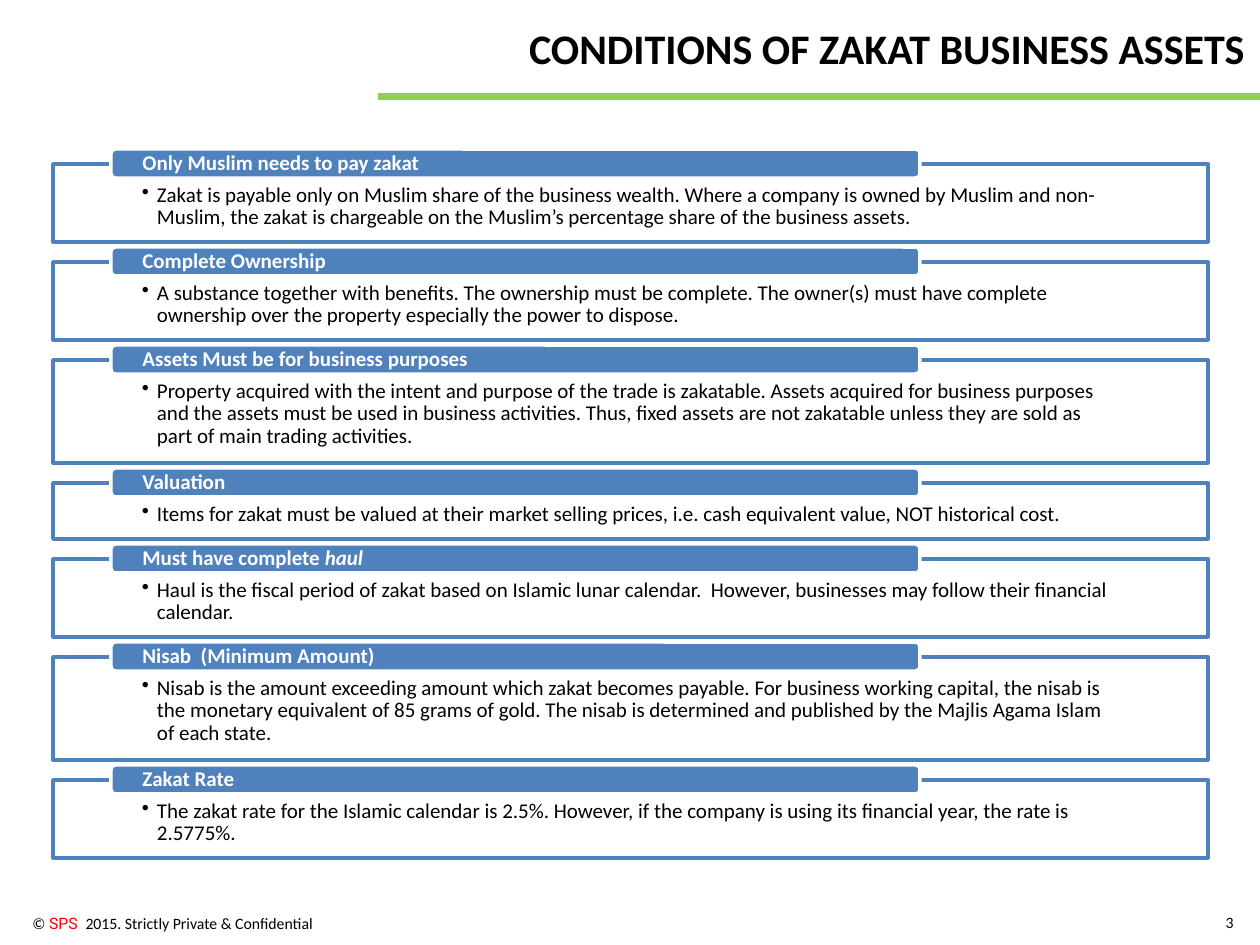
from dataclasses import dataclass

from lxml.etree import SubElement
from pptx import Presentation
from pptx.dml.color import RGBColor
from pptx.enum.shapes import MSO_SHAPE
from pptx.enum.text import MSO_ANCHOR, MSO_AUTO_SIZE, PP_ALIGN
from pptx.oxml.ns import qn
from pptx.util import Emu, Pt

PX_PER_INCH = 126
COLORS = {"blue": "4F81BD", "green": "92D050", "red": "FF0000",
          "black": "000000", "white": "FFFFFF"}

# Condition grid
BOX_LEFT, BOX_WIDTH, FIRST_TOP, BOX_GAP = 53, 1155, 164, 20
BOX_HEIGHTS = {1: 56, 2: 78, 3: 103}  # by number of text lines
BAR_LEFT, BAR_WIDTH, BAR_HEIGHT, BAR_RISE = 111, 809, 29, 15
BULLET_INDENT = 15


@dataclass(frozen=True)
class Run:
    text: str
    color: str = "black"
    size: int = 12
    bold: bool = False
    italic: bool = False
    font: str = "Calibri"


@dataclass(frozen=True)
class Condition:
    heading: str
    body: str
    lines: int
    italic_ending: str = ""


CONDITIONS = [
    Condition("Only Muslim needs to pay zakat",
              "Zakat is payable only on Muslim share of the business wealth. Where a company "
              "is owned by Muslim and non-Muslim, the zakat is chargeable on the Muslim’s "
              "percentage share of the business assets.", 2),
    Condition("Complete Ownership",
              "A substance together with benefits. The ownership must be complete. The owner(s) "
              "must have complete ownership over the property especially the power to dispose.", 2),
    Condition("Assets Must be for business purposes",
              "Property acquired with the intent and purpose of the trade is zakatable. Assets "
              "acquired for business purposes and the assets must be used in business activities. "
              "Thus, fixed assets are not zakatable unless they are sold as part of main trading "
              "activities.", 3),
    Condition("Valuation",
              "Items for zakat must be valued at their market selling prices, i.e. cash "
              "equivalent value, NOT historical cost.", 1),
    Condition("Must have complete ",
              "Haul is the fiscal period of zakat based on Islamic lunar calendar.  However, "
              "businesses may follow their financial calendar.", 2, "haul"),
    Condition("Nisab  (Minimum Amount)",
              "Nisab is the amount exceeding amount which zakat becomes payable. For business "
              "working capital, the nisab is the monetary equivalent of 85 grams of gold. The "
              "nisab is determined and published by the Majlis Agama Islam of each state.", 3),
    Condition("Zakat Rate",
              "The zakat rate for the Islamic calendar is 2.5%. However, if the company is using "
              "its financial year, the rate is 2.5775%.", 2),
]


def px(length: int) -> Emu:
    return Emu(round(length * 914400 / PX_PER_INCH))


def rgb(name: str) -> RGBColor:
    return RGBColor.from_string(COLORS[name])


def set_attributes(target, values: dict) -> None:
    for name, value in values.items():
        setattr(target, name, value)


def add_runs(paragraph, runs: list[Run]) -> None:
    for item in runs:
        run = paragraph.add_run()
        run.text = item.text
        set_attributes(run.font, {"name": item.font, "size": Pt(item.size),
                                  "bold": item.bold, "italic": item.italic})
        run.font.color.rgb = rgb(item.color)


def add_block(slide, kind, bounds: tuple, fill: str, line: str | None = None):
    shape = slide.shapes.add_shape(kind, *map(px, bounds))
    shape.shadow.inherit = False
    shape.fill.solid()
    shape.fill.fore_color.rgb = rgb(fill)
    if line:
        shape.line.color.rgb = rgb(line)
        shape.line.width = Pt(2)
    else:
        shape.line.fill.background()
    return shape


def format_text(shape, runs: list[Run], frame_values: dict, paragraph_values: dict):
    frame = shape.text_frame
    set_attributes(frame, frame_values)
    paragraph = frame.paragraphs[0]
    set_attributes(paragraph, paragraph_values)
    add_runs(paragraph, runs)
    return paragraph


def add_bullet(paragraph) -> None:
    properties = paragraph._p.get_or_add_pPr()
    properties.set("marL", str(px(BULLET_INDENT)))
    properties.set("indent", str(-px(BULLET_INDENT)))
    SubElement(properties, qn("a:buChar")).set("char", "•")


def add_condition(slide, condition: Condition, top: int) -> None:
    # Outlined box with the bulleted explanation
    box = add_block(slide, MSO_SHAPE.RECTANGLE,
                    (BOX_LEFT, top, BOX_WIDTH, BOX_HEIGHTS[condition.lines]), "white", "blue")
    fill_color = box.fill._xPr.find(qn("a:solidFill"))[0]
    SubElement(fill_color, qn("a:alpha")).set("val", "90000")
    paragraph = format_text(
        box, [Run(condition.body)],
        {"word_wrap": True, "vertical_anchor": MSO_ANCHOR.TOP, "margin_left": px(89),
         "margin_right": px(89), "margin_top": px(20), "margin_bottom": px(11)},
        {"alignment": PP_ALIGN.LEFT, "level": 1, "line_spacing": 0.9})
    add_bullet(paragraph)

    # Heading bar across the top edge of the box
    bar = add_block(slide, MSO_SHAPE.ROUNDED_RECTANGLE,
                    (BAR_LEFT, top - BAR_RISE, BAR_WIDTH, BAR_HEIGHT), "blue", "white")
    runs = [Run(condition.heading, "white", bold=True)]
    if condition.italic_ending:
        runs.append(Run(condition.italic_ending, "white", bold=True, italic=True))
    format_text(
        bar, runs,
        {"word_wrap": True, "vertical_anchor": MSO_ANCHOR.MIDDLE, "margin_left": px(30),
         "margin_right": px(30), "margin_top": 0, "margin_bottom": 0},
        {"alignment": PP_ALIGN.LEFT, "line_spacing": 0.9})


def add_label(slide, bounds: tuple, runs: list[Run], anchor) -> None:
    label = slide.shapes.add_textbox(*map(px, bounds))
    format_text(label, runs, {"word_wrap": True, "vertical_anchor": anchor},
                {"alignment": PP_ALIGN.RIGHT})


def main() -> None:
    presentation = Presentation()
    set_attributes(presentation, {"slide_width": px(1260), "slide_height": px(945)})
    slide = presentation.slides.add_slide(presentation.slide_layouts[5])

    # Title and its rule
    add_block(slide, MSO_SHAPE.RECTANGLE, (378, 93, 882, 7), "green")
    title = slide.shapes.title
    set_attributes(title, {"left": px(513), "top": px(16), "width": px(748), "height": px(63)})
    format_text(title, [Run("CONDITIONS OF ZAKAT BUSINESS ASSETS", size=24, bold=True)],
                {"word_wrap": False, "auto_size": MSO_AUTO_SIZE.NONE,
                 "vertical_anchor": MSO_ANCHOR.TOP},
                {"alignment": PP_ALIGN.CENTER})

    # Conditions, stacked with equal gaps
    top = FIRST_TOP
    for condition in CONDITIONS:
        add_condition(slide, condition, top)
        top += BOX_HEIGHTS[condition.lines] + BOX_GAP

    # Footer
    add_label(slide, (-42, 908, 367, 32),
              [Run("© ", size=9), Run("SPS  ", "red", 9, font="Roboto"),
               Run("2015. Strictly Private & Confidential", size=9)], MSO_ANCHOR.TOP)
    add_label(slide, (1196, 897, 50, 50), [Run("3", size=9)], MSO_ANCHOR.MIDDLE)

    presentation.save("out.pptx")


if __name__ == "__main__":
    main()
